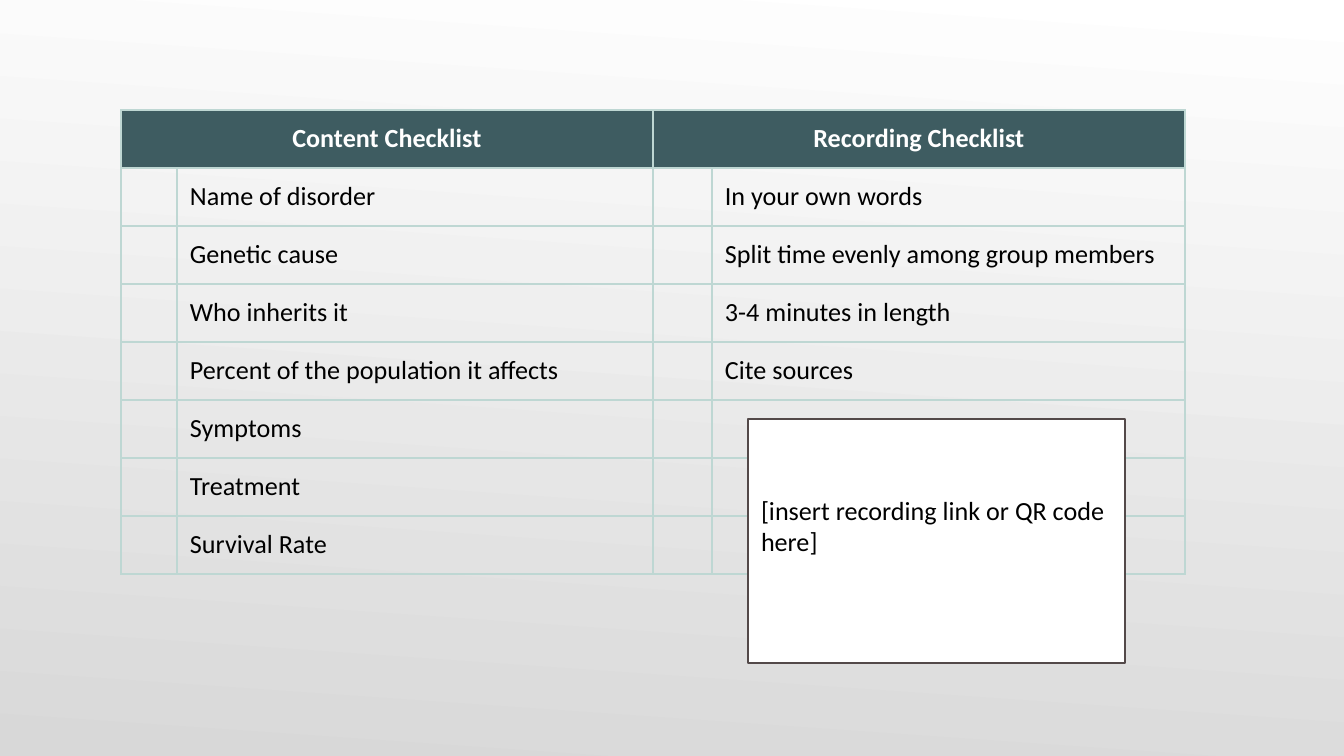
from dataclasses import dataclass
from typing import Any

from lxml.etree import SubElement
from pptx import Presentation
from pptx.dml.color import RGBColor
from pptx.enum.shapes import MSO_SHAPE
from pptx.enum.text import MSO_ANCHOR, PP_ALIGN
from pptx.oxml.ns import qn
from pptx.slide import Slide
from pptx.table import Table, _Cell
from pptx.util import Emu, Pt

EMU_PER_INCH = 914400
PX_PER_INCH = 134.4


@dataclass(frozen=True)
class Theme:
    font: str = "Calibri"
    text_size: int = 14
    line_width: float = 0.75
    text: str = "000000"
    header_text: str = "FFFFFF"
    header_fill: str = "3E5C61"
    grid: str = "BED7D3"
    box_fill: str = "FFFFFF"
    box_line: str = "534949"
    page_top: str = "FFFFFF"
    page_bottom: str = "D8D8D8"
    page_angle: int = 266


@dataclass(frozen=True)
class Frame:
    left: int
    top: int
    width: int
    height: int

    def lengths(self) -> tuple[Emu, ...]:
        return tuple(px(n) for n in (self.left, self.top, self.width, self.height))


@dataclass(frozen=True)
class Checklist:
    title: str
    items: tuple[str, ...]
    tick_width: int
    item_width: int


THEME = Theme()
INSET = 13
ROW_COUNT = 8
ROW_HEIGHT = 58
TABLE_LEFT, TABLE_TOP = 121, 110
LINK_FRAME = Frame(748, 419, 377, 244)
LINK_BOTTOM_INSET = 44
LINK_TEXT = "[insert recording link or QR code here]"
CHECKLISTS = (
    Checklist(
        "Content Checklist",
        (
            "Name of disorder",
            "Genetic cause",
            "Who inherits it",
            "Percent of the population it affects",
            "Symptoms",
            "Treatment",
            "Survival Rate",
        ),
        56,
        476,
    ),
    Checklist(
        "Recording Checklist",
        (
            "In your own words",
            "Split time evenly among group members",
            "3-4 minutes in length",
            "Cite sources",
        ),
        59,
        473,
    ),
)


def px(length: int) -> Emu:
    return Emu(round(length * EMU_PER_INCH / PX_PER_INCH))


def apply_format(target: Any, values: dict[str, Any]) -> None:
    for name, value in values.items():
        setattr(target, name, value)


def insets(bottom: int = INSET) -> dict[str, Emu]:
    margins = {f"margin_{side}": px(INSET) for side in ("left", "top", "right")}
    return margins | {"margin_bottom": px(bottom)}


def write_text(para: Any, text: str, color: str, bold: bool, align: PP_ALIGN) -> None:
    para.alignment = align
    span = para.add_run()
    span.text = text
    apply_format(
        span.font,
        {"name": THEME.font, "size": Pt(THEME.text_size), "bold": bold},
    )
    span.font.color.rgb = RGBColor.from_string(color)


def style_cell(cell: _Cell, fill: str | None = None) -> None:
    properties = cell._tc.get_or_add_tcPr()
    for side in ("lnL", "lnR", "lnT", "lnB"):
        line = SubElement(properties, qn(f"a:{side}"), w=str(Pt(THEME.line_width)))
        solid = SubElement(line, qn("a:solidFill"))
        SubElement(solid, qn("a:srgbClr"), val=THEME.grid)
    if fill:
        cell.fill.solid()
        cell.fill.fore_color.rgb = RGBColor.from_string(fill)
    else:
        cell.fill.background()


def fill_cell(cell: _Cell, text: str, color: str, bold: bool, align: PP_ALIGN) -> None:
    apply_format(cell, insets())
    write_text(cell.text_frame.paragraphs[0], text, color, bold, align)


def draw_checklist(table: Table, checklist: Checklist, column: int) -> None:
    table.columns[column].width = px(checklist.tick_width)
    table.columns[column + 1].width = px(checklist.item_width)
    for row in range(ROW_COUNT):
        for offset in range(2):
            fill = THEME.header_fill if row == 0 else None
            style_cell(table.cell(row, column + offset), fill)
    header = table.cell(0, column)
    header.merge(table.cell(0, column + 1))
    fill_cell(header, checklist.title, THEME.header_text, True, PP_ALIGN.CENTER)
    for row, item in enumerate(checklist.items, start=1):
        fill_cell(table.cell(row, column + 1), item, THEME.text, False, PP_ALIGN.LEFT)


def draw_table(page: Slide, checklists: tuple[Checklist, ...]) -> None:
    width = sum(entry.tick_width + entry.item_width for entry in checklists)
    frame = Frame(TABLE_LEFT, TABLE_TOP, width, ROW_COUNT * ROW_HEIGHT)
    table = page.shapes.add_table(
        ROW_COUNT, 2 * len(checklists), *frame.lengths()
    ).table
    apply_format(table, {"first_row": False, "horz_banding": False})
    for index, checklist in enumerate(checklists):
        draw_checklist(table, checklist, 2 * index)


def draw_link_box(page: Slide, frame: Frame, text: str) -> None:
    box = page.shapes.add_shape(MSO_SHAPE.RECTANGLE, *frame.lengths())
    box.shadow.inherit = False
    box.fill.solid()
    box.fill.fore_color.rgb = RGBColor.from_string(THEME.box_fill)
    box.line.color.rgb = RGBColor.from_string(THEME.box_line)
    box.line.width = Pt(THEME.line_width)
    apply_format(
        box.text_frame,
        insets(LINK_BOTTOM_INSET)
        | {"word_wrap": True, "vertical_anchor": MSO_ANCHOR.MIDDLE},
    )
    write_text(
        box.text_frame.paragraphs[0], text, THEME.text, False, PP_ALIGN.LEFT
    )


def paint_background(page: Slide) -> None:
    fill = page.background.fill
    fill.gradient()
    fill.gradient_angle = THEME.page_angle
    for stop, color in zip(fill.gradient_stops, (THEME.page_top, THEME.page_bottom)):
        stop.color.rgb = RGBColor.from_string(color)


def main() -> None:
    deck = Presentation()
    apply_format(deck, {"slide_width": px(1344), "slide_height": px(756)})
    page = deck.slides.add_slide(deck.slide_layouts[6])
    paint_background(page)
    draw_table(page, CHECKLISTS)
    draw_link_box(page, LINK_FRAME, LINK_TEXT)
    deck.save("out.pptx")


if __name__ == "__main__":
    main()
